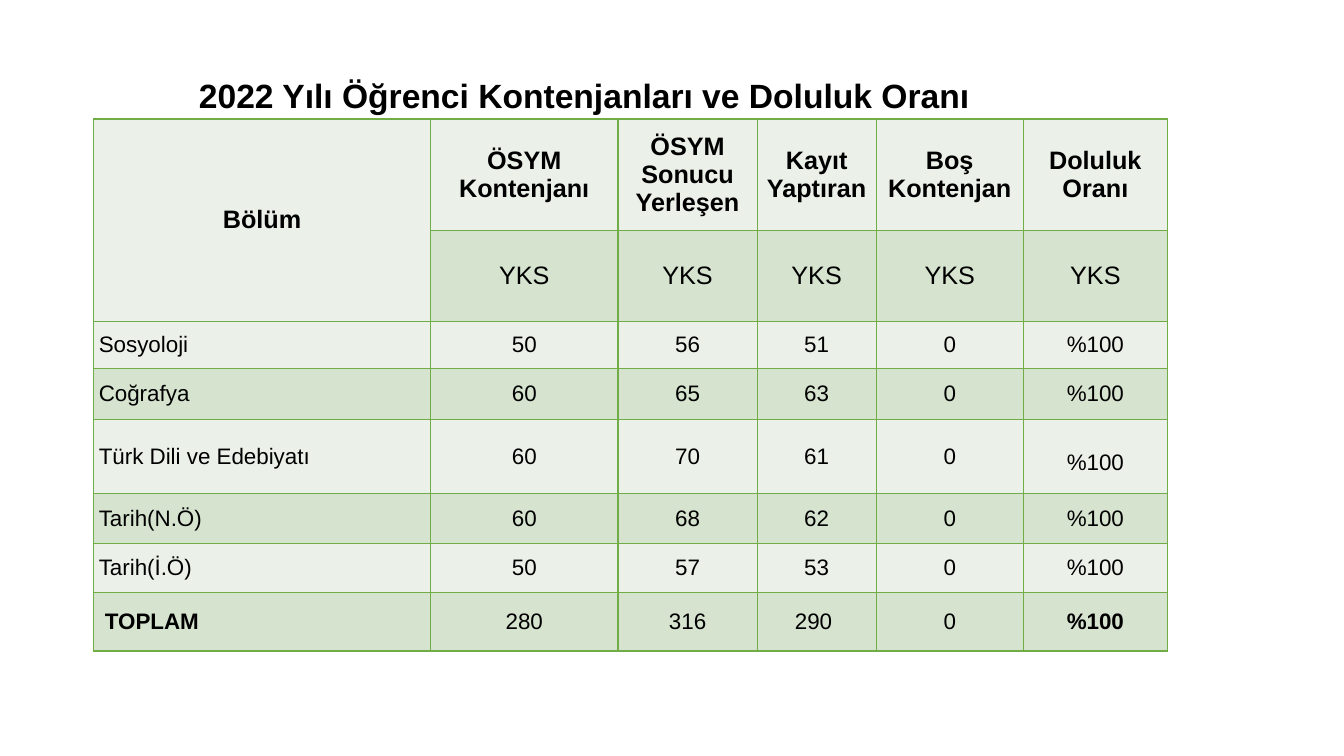
from lxml import etree
from pptx import Presentation
from pptx.dml.color import RGBColor
from pptx.enum import text as t
from pptx.oxml import ns
from pptx.util import Inches, Pt

HEADING = "2022 Yılı Öğrenci Kontenjanları ve Doluluk Oranı"
ROWS = [
    ("Bölüm", "ÖSYM Kontenjanı", "ÖSYM Sonucu Yerleşen", "Kayıt Yaptıran",
     "Boş Kontenjan", "Doluluk Oranı"),
    ("", "YKS", "YKS", "YKS", "YKS", "YKS"),
    ("Sosyoloji", "50", "56", "51", "0", "%100"),
    ("Coğrafya", "60", "65", "63", "0", "%100"),
    ("Türk Dili ve Edebiyatı", "60", "70", "61", "0", "%100"),
    ("Tarih(N.Ö)", "60", "68", "62", "0", "%100"),
    ("Tarih(İ.Ö)", "50", "57", "53", "0", "%100"),
    (" TOPLAM", "280", "316", "290 ", "0", "%100"),
]
COLUMN_WIDTHS = [3.34, 1.86, 1.38, 1.18, 1.46, 1.43]
ROW_HEIGHTS = [1.11, 0.9, 0.47, 0.5, 0.74, 0.49, 0.49, 0.58]
HEADER_ROWS = 2
TOTAL_ROW = len(ROWS) - 1
BOLD_TOTALS = (0, 5)
LOOSE_CELL = (4, 5)

BLACK = RGBColor(0x00, 0x00, 0x00)
GREEN = RGBColor(0x70, 0xAD, 0x47)
BANDS = [RGBColor(0xEB, 0xF1, 0xE9), RGBColor(0xD5, 0xE3, 0xCF)]
CELL_FORMAT = {
    "margin_left": Inches(0.05), "margin_right": Inches(0.05),
    "margin_top": 0, "margin_bottom": 0,
    "vertical_anchor": t.MSO_ANCHOR.MIDDLE,
}
HEADING_FORMAT = {
    "left": Inches(1.85), "top": Inches(0.69),
    "width": Inches(7.89), "height": Inches(0.5),
}
HEADING_FRAME = {
    "word_wrap": True, "auto_size": t.MSO_AUTO_SIZE.NONE,
    "vertical_anchor": t.MSO_ANCHOR.TOP,
}


def set_all(target, values):
    for name, value in values.items():
        setattr(target, name, value)


def style_text(paragraph, size, bold, align):
    paragraph.alignment = align
    for run in paragraph.runs:
        set_all(run.font, {"name": "Arial", "size": Pt(size), "bold": bold})
        run.font.color.rgb = BLACK


def add_borders(cell):
    properties = cell._tc.get_or_add_tcPr()
    for side in ("a:lnL", "a:lnR", "a:lnT", "a:lnB"):
        line = etree.SubElement(properties, ns.qn(side), w=str(Pt(1)))
        fill = etree.SubElement(line, ns.qn("a:solidFill"))
        etree.SubElement(fill, ns.qn("a:srgbClr"), val=str(GREEN))


def fill_cell(cell, words, row, column):
    set_all(cell, CELL_FORMAT)
    add_borders(cell)
    cell.fill.solid()
    cell.fill.fore_color.rgb = BANDS[row % 2]
    cell.text = words
    header = row < HEADER_ROWS
    bold = row == 0 or (row == TOTAL_ROW and column in BOLD_TOTALS)
    centred = header or column > 0
    paragraph = cell.text_frame.paragraphs[0]
    style_text(paragraph, 18 if header else 16, bold,
               t.PP_ALIGN.CENTER if centred else t.PP_ALIGN.LEFT)
    if (row, column) == LOOSE_CELL:
        paragraph.line_spacing = 1.5


def main():
    deck = Presentation()
    set_all(deck, {"slide_width": Inches(13.33), "slide_height": Inches(7.5)})
    slide = deck.slides.add_slide(deck.slide_layouts[5])

    heading = slide.shapes.title
    set_all(heading, HEADING_FORMAT)
    heading.text_frame.text = HEADING
    set_all(heading.text_frame, HEADING_FRAME)
    style_text(heading.text_frame.paragraphs[0], 24, True, t.PP_ALIGN.CENTER)

    quotas = slide.shapes.add_table(
        len(ROWS), len(COLUMN_WIDTHS), Inches(0.93), Inches(1.18),
        Inches(sum(COLUMN_WIDTHS)), Inches(sum(ROW_HEIGHTS))).table
    for column, width in zip(quotas.columns, COLUMN_WIDTHS):
        column.width = Inches(width)
    for row, height in zip(quotas.rows, ROW_HEIGHTS):
        row.height = Inches(height)
    for r, row in enumerate(ROWS):
        for c, words in enumerate(row):
            fill_cell(quotas.cell(r, c), words, r, c)
    quotas.cell(0, 0).merge(quotas.cell(HEADER_ROWS - 1, 0))

    deck.save("out.pptx")


if __name__ == "__main__":
    main()
